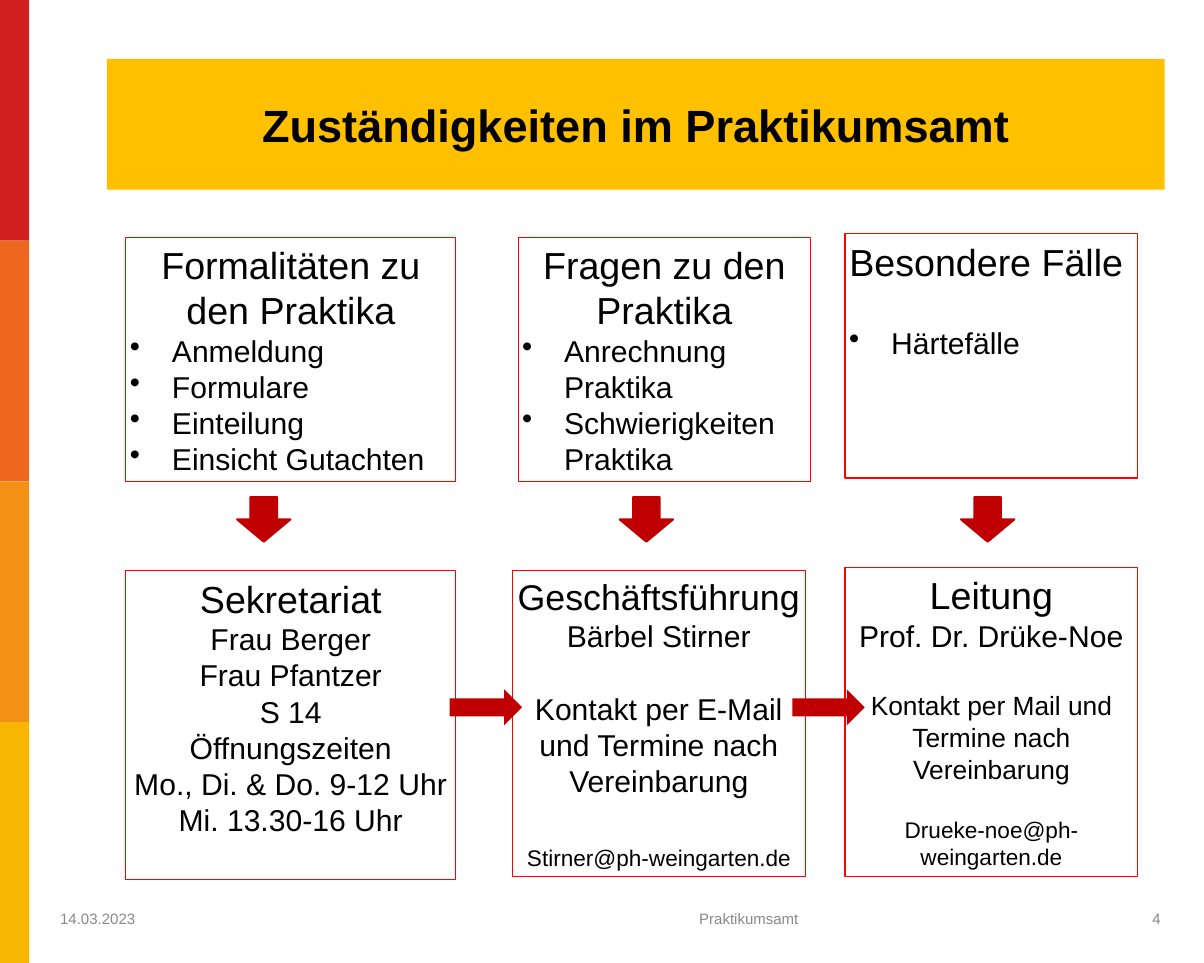
from dataclasses import dataclass

import pptx
import pptx.dml.color
import pptx.enum.shapes
import pptx.enum.text
import pptx.oxml.ns
import pptx.util
from lxml import etree

Inches = pptx.util.Inches
Pt = pptx.util.Pt
Align = pptx.enum.text.PP_ALIGN
Anchor = pptx.enum.text.MSO_ANCHOR
Preset = pptx.enum.shapes.MSO_SHAPE

FONT = "Arial"
BLANK_LINE = 1.2
BULLET_INDENT = 0.62
SLIDE_WIDTH, SLIDE_HEIGHT = 17.78, 14.22
COLORS = {
    "text": "000000",
    "footer": "898989",
    "title": "FFC000",
    "frame": "FF0000",
    "arrow": "C00000",
}
STRIPES = ["D11F20", "EE671F", "F29115", "F9B600"]


@dataclass(frozen=True)
class Line:
    text: str
    size: float = 32
    bullet: bool = False
    gap: float = 0
    align: Align = Align.CENTER
    bold: bool = False
    color: str = COLORS["text"]


@dataclass(frozen=True)
class Box:
    left: float
    top: float
    width: float
    height: float
    lines: list[Line]
    border: float = 1


@dataclass(frozen=True)
class Arrow:
    preset: Preset
    left: float
    top: float
    width: float
    height: float
    border: float = 0


@dataclass(frozen=True)
class Footer:
    left: float
    width: float
    inset: float
    line: Line


def bullets(*texts: str) -> list[Line]:
    return [Line(text, bullet=True, align=Align.LEFT) for text in texts]


BOXES = [
    Box(1.86, 3.5, 4.87, 3.61, [
        Line("Formalitäten zu den Praktika", 40),
        *bullets("Anmeldung", "Formulare", "Einteilung", "Einsicht Gutachten"),
    ]),
    Box(7.65, 3.5, 4.32, 3.61, [
        Line("Fragen zu den Praktika", 40),
        *bullets("Anrechnung Praktika", "Schwierigkeiten Praktika"),
    ]),
    Box(12.48, 3.45, 4.32, 3.61, [
        Line("Besondere Fälle ", 40),
        Line("Härtefälle", bullet=True, gap=36, align=Align.LEFT),
    ], 1.5),
    Box(1.86, 8.43, 4.87, 4.56, [
        Line("Sekretariat", 40),
        Line("Frau Berger"),
        Line("Frau Pfantzer"),
        Line("S 14"),
        Line("Öffnungszeiten"),
        Line("Mo., Di. & Do. 9-12 Uhr"),
        Line("Mi. 13.30-16 Uhr"),
    ]),
    Box(7.57, 8.42, 4.32, 4.52, [
        Line("Geschäftsführung", 38),
        Line("Bärbel Stirner"),
        Line("Kontakt per E-Mail und Termine nach Vereinbarung", gap=32),
        Line("Stirner@ph-weingarten.de", 24, gap=40),
    ]),
    Box(12.48, 8.38, 4.32, 4.56, [
        Line("Leitung", 40),
        Line("Prof. Dr. Drüke-Noe"),
        Line("Kontakt per Mail und Termine nach Vereinbarung", 28, gap=32),
        Line("Drueke-noe@ph-weingarten.de", 24, gap=28),
    ], 1.5),
]
ARROWS = [
    *[Arrow(Preset.DOWN_ARROW, left, 7.34, 0.79, 0.66, 2) for left in (3.5, 9.15, 14.19)],
    *[Arrow(Preset.RIGHT_ARROW, left, 10.18, 1.07, 0.53) for left in (6.64, 11.7)],
]
FOOTERS = [
    Footer(0.79, 4, 0.1, Line("14.03.2023", 16, align=Align.LEFT, color=COLORS["footer"])),
    Footer(5.89, 6, 0.1, Line("Praktikumsamt", 16, align=Align.RIGHT, color=COLORS["footer"])),
    Footer(12.99, 4.21, 0.06, Line("4", 16, align=Align.RIGHT, color=COLORS["footer"])),
]


def rgb(value: str) -> pptx.dml.color.RGBColor:
    return pptx.dml.color.RGBColor.from_string(value)


def add_preset(slide, preset: Preset, left: float, top: float, width: float, height: float,
               fill: str = "", line: str = "", border: float = 0):
    shape = slide.shapes.add_shape(preset, Inches(left), Inches(top), Inches(width), Inches(height))
    shape.shadow.inherit = False
    if fill:
        shape.fill.solid()
        shape.fill.fore_color.rgb = rgb(fill)
    else:
        shape.fill.background()
    if border:
        shape.line.color.rgb = rgb(line)
        shape.line.width = Pt(border)
    else:
        shape.line.fill.background()
    return shape


def add_bullet(paragraph) -> None:
    properties = paragraph._p.get_or_add_pPr()
    properties.set("marL", str(Inches(BULLET_INDENT)))
    properties.set("indent", str(-Inches(BULLET_INDENT)))
    bullet = etree.SubElement(properties, pptx.oxml.ns.qn("a:buChar"))
    bullet.set("char", "•")


def write_lines(frame, lines: list[Line], anchor: Anchor, side: float, edge: float) -> None:
    frame.word_wrap = True
    frame.vertical_anchor = anchor
    frame.margin_left = frame.margin_right = Inches(side)
    frame.margin_top = frame.margin_bottom = Inches(edge)
    for index, line in enumerate(lines):
        paragraph = frame.add_paragraph() if index else frame.paragraphs[0]
        paragraph.text = line.text
        if line.bullet:
            add_bullet(paragraph)
        paragraph.alignment = line.align
        if line.gap:
            paragraph.space_before = Pt(line.gap * BLANK_LINE)
        for run in paragraph.runs:
            run.font.name = FONT
            run.font.size = Pt(line.size)
            run.font.bold = line.bold
            run.font.color.rgb = rgb(line.color)


def add_box(slide, box: Box) -> None:
    frame = add_preset(slide, Preset.RECTANGLE, box.left, box.top, box.width, box.height,
                       line=COLORS["frame"], border=box.border)
    write_lines(frame.text_frame, box.lines, Anchor.TOP, 0.06, 0.07)


def add_footer(slide, footer: Footer) -> None:
    note = slide.shapes.add_textbox(Inches(footer.left), Inches(13.18),
                                    Inches(footer.width), Inches(0.76))
    write_lines(note.text_frame, [footer.line], Anchor.MIDDLE, footer.inset, 0.05)


def main() -> None:
    deck = pptx.Presentation()
    deck.slide_width = Inches(SLIDE_WIDTH)
    deck.slide_height = Inches(SLIDE_HEIGHT)
    slide = deck.slides.add_slide(deck.slide_layouts[6])

    stripe_height = SLIDE_HEIGHT / len(STRIPES)
    for index, color in enumerate(STRIPES):
        add_preset(slide, Preset.RECTANGLE, 0, index * stripe_height, 0.43, stripe_height, color)

    title = add_preset(slide, Preset.RECTANGLE, 1.58, 0.87, 15.62, 1.93, COLORS["title"])
    write_lines(title.text_frame, [Line("Zuständigkeiten im Praktikumsamt", 48, bold=True)],
                Anchor.MIDDLE, 0.06, 0.06)

    for footer in FOOTERS:
        add_footer(slide, footer)
    for box in BOXES:
        add_box(slide, box)
    for arrow in ARROWS:
        add_preset(slide, arrow.preset, arrow.left, arrow.top, arrow.width, arrow.height,
                   COLORS["arrow"], COLORS["arrow"], arrow.border)

    deck.save("out.pptx")


if __name__ == "__main__":
    main()
